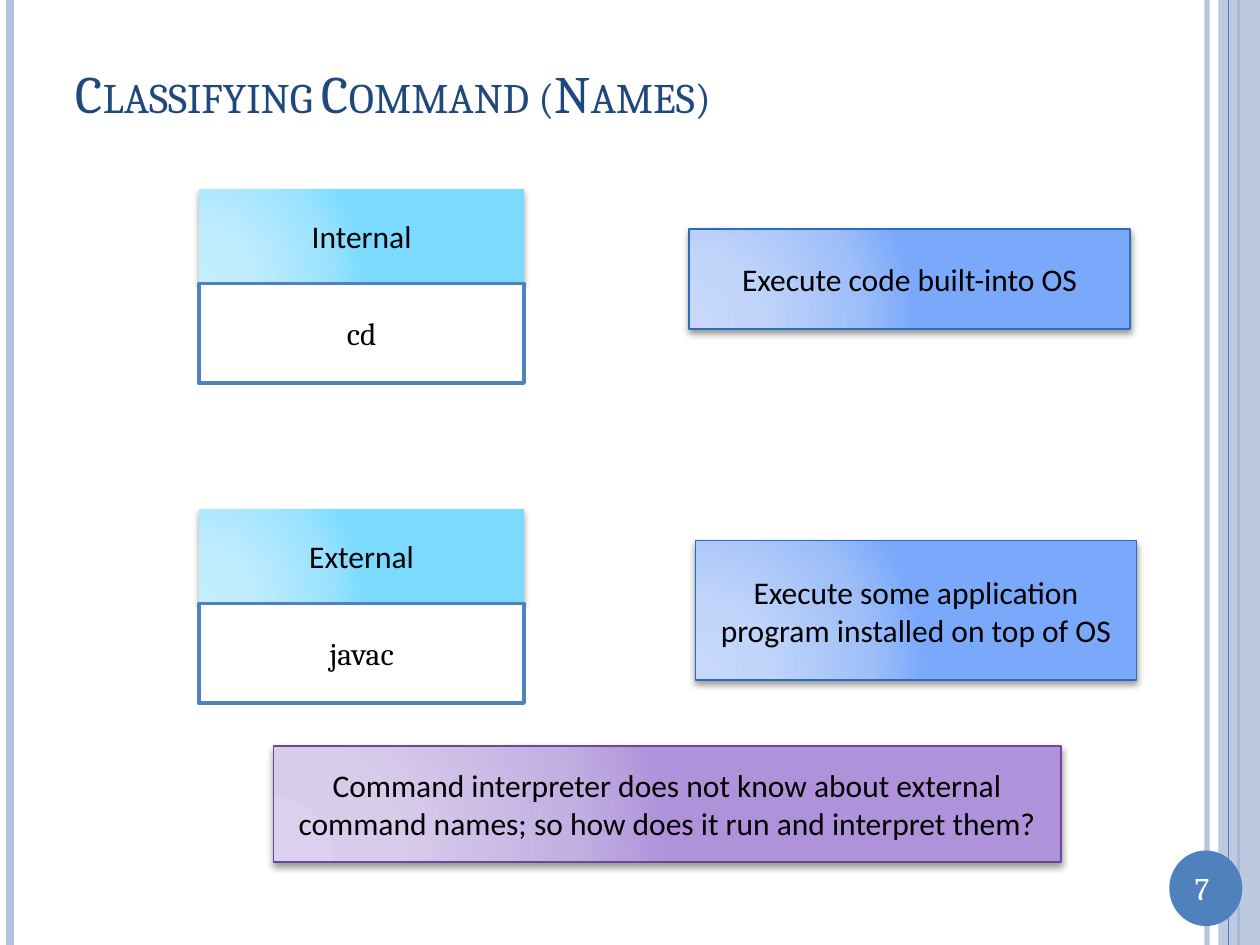
from dataclasses import dataclass

from lxml.etree import SubElement
from pptx import Presentation
from pptx.dml.color import RGBColor
from pptx.enum.shapes import MSO_CONNECTOR as Connector, MSO_SHAPE as Shape
from pptx.enum.text import MSO_ANCHOR as Anchor, MSO_AUTO_SIZE as AutoSize, PP_ALIGN as Align
from pptx.oxml import parse_xml
from pptx.oxml.ns import nsdecls, qn
from pptx.util import Inches, Pt


@dataclass(frozen=True)
class Theme:
    heading_font: str = "Cambria"
    body_font: str = "Calibri"
    title_size: int = 30
    body_size: int = 18
    title: str = "1F497D"
    text: str = "000000"
    white: str = "FFFFFF"
    accent: str = "4F81BD"
    pale: str = "B3C1DB"
    stops: tuple = (0, 30, 75, 100)
    cyan: tuple = ("C4EEFF", "BFECFF", "9DE3FF", "7ADBFF")
    blue: tuple = ("C7D8FB", "C1D5FA", "9FBFF9", "7AA9FB")
    purple: tuple = ("DBD0ED", "D8CCEB", "C3B0E2", "AF92DA")
    blue_edge: str = "2C6CB9"
    purple_edge: str = "6C4898"
    header_shadow: tuple = (32, 3.5, 2.2)
    card_shadow: tuple = (40, 4, 2)


class SlideBuilder:
    def __init__(self, slide, theme):
        self.slide = slide
        self.theme = theme

    def add_words(self, frame, text, font, size, color, align=Align.CENTER):
        frame.word_wrap = True
        frame.vertical_anchor = Anchor.MIDDLE
        paragraph = frame.paragraphs[0]
        paragraph.alignment = align
        run = paragraph.add_run()
        run.text = text
        run.font.name = font
        run.font.size = Pt(size)
        run.font.color.rgb = RGBColor.from_string(color)
        return run

    def title(self, text, left, top, width, height):
        title = self.slide.shapes.title
        title.left, title.top = Inches(left), Inches(top)
        title.width, title.height = Inches(width), Inches(height)
        run = self.add_words(title.text_frame, text, self.theme.heading_font,
                             self.theme.title_size, self.theme.title, Align.LEFT)
        run.font._element.set("cap", "small")

    def set_alpha(self, fill_parent, percent):
        color = fill_parent.find(f"{qn('a:solidFill')}/{qn('a:srgbClr')}")
        SubElement(color, qn("a:alpha"), val=str(percent * 1000))

    def stripe(self, x, color, weight, alpha=100):
        stripe = self.slide.shapes.add_connector(
            Connector.STRAIGHT, Inches(x), 0, Inches(x), Inches(7.5))
        stripe.line.color.rgb = RGBColor.from_string(color)
        stripe.line.width = Pt(weight)
        properties = stripe._element.spPr
        if alpha < 100:
            self.set_alpha(properties.find(qn("a:ln")), alpha)
        SubElement(properties, qn("a:effectLst"))

    def shape(self, kind, left, top, width, height, fill=None, edge=None, weight=1, alpha=100):
        shape = self.slide.shapes.add_shape(
            kind, Inches(left), Inches(top), Inches(width), Inches(height))
        shape.shadow.inherit = False
        if fill:
            shape.fill.solid()
            shape.fill.fore_color.rgb = RGBColor.from_string(fill)
        if alpha < 100:
            self.set_alpha(shape._element.spPr, alpha)
        if edge:
            shape.line.color.rgb = RGBColor.from_string(edge)
            shape.line.width = Pt(weight)
        else:
            shape.line.fill.background()
        return shape

    def glow_box(self, text, left, top, width, height, colors, shadow, edge=None, inset=None):
        box = self.shape(Shape.RECTANGLE, left, top, width, height, edge=edge)
        properties = box._element.spPr
        stops = "".join(
            f'<a:gs pos="{position * 1000}"><a:srgbClr val="{color}"/></a:gs>'
            for position, color in zip(self.theme.stops, colors))
        properties.find(qn("a:prstGeom")).addnext(parse_xml(
            f'<a:gradFill {nsdecls("a")} rotWithShape="1"><a:gsLst>{stops}</a:gsLst>'
            '<a:path path="circle"><a:fillToRect l="5000" t="100000" r="120000" b="10000"/>'
            '</a:path></a:gradFill>'))
        opacity, blur, distance = shadow
        properties.find(qn("a:effectLst")).append(parse_xml(
            f'<a:outerShdw {nsdecls("a")} blurRad="{Pt(blur)}" dist="{Pt(distance)}" '
            'dir="5400000" rotWithShape="0"><a:srgbClr val="000000">'
            f'<a:alpha val="{opacity * 1000}"/></a:srgbClr></a:outerShdw>'))
        frame = box.text_frame
        if inset:
            frame.margin_left = frame.margin_right = Inches(inset)
            frame.margin_top = frame.margin_bottom = Inches(inset)
        self.add_words(frame, text, self.theme.body_font, self.theme.body_size, self.theme.text)

    def command_group(self, category, command, top):
        left, width, header_height = 1.58, 2.58, 0.75
        self.glow_box(category, left, top, width, header_height,
                      self.theme.cyan, self.theme.header_shadow, inset=0.05)
        example = self.shape(Shape.RECTANGLE, left, top + header_height, width, 0.79,
                             self.theme.white, self.theme.accent, 2)
        self.add_words(example.text_frame, command, self.theme.heading_font,
                       self.theme.body_size, self.theme.text)

    def page_number(self, number):
        self.shape(Shape.OVAL, 9.28, 6.75, 0.58, 0.6, self.theme.accent)
        label = self.slide.shapes.add_textbox(
            Inches(9.25), Inches(6.85), Inches(0.58), Inches(0.4))
        self.add_words(label.text_frame, number, self.theme.heading_font,
                       self.theme.body_size, self.theme.white)
        label.text_frame.vertical_anchor = Anchor.TOP
        label.text_frame.auto_size = AutoSize.SHAPE_TO_FIT_TEXT

    def frame_page(self):
        self.stripe(9.58, self.theme.pale, 3, 93)
        self.stripe(0.08, self.theme.pale, 4.5)
        self.stripe(9.83, self.theme.accent, 1.5)
        self.shape(Shape.RECTANGLE, 9.67, 0, 0.33, 7.5, self.theme.pale, alpha=87)
        self.stripe(9.75, self.theme.accent, 0.75)


def main():
    presentation = Presentation()
    presentation.slide_width = Inches(10)
    presentation.slide_height = Inches(7.5)
    theme = Theme()
    builder = SlideBuilder(presentation.slides.add_slide(presentation.slide_layouts[5]), theme)

    builder.frame_page()
    builder.page_number("7")
    builder.title("Classifying Command (Names)", 0.5, 0.3, 8.67, 0.87)

    builder.command_group("Internal", "cd", 1.5)
    builder.command_group("External", "javac", 4.04)

    builder.glow_box("Execute code built-into OS", 5.47, 1.82, 3.5, 0.79,
                     theme.blue, theme.card_shadow, theme.blue_edge)
    builder.glow_box("Execute some application program installed on top of OS",
                     5.52, 4.29, 3.5, 1.11, theme.blue, theme.card_shadow, theme.blue_edge)
    builder.glow_box("Command interpreter does not know about external command names; "
                     "so how does it run and interpret them?",
                     2.17, 5.92, 6.25, 0.92, theme.purple, theme.card_shadow, theme.purple_edge)

    presentation.save("out.pptx")


if __name__ == "__main__":
    main()
